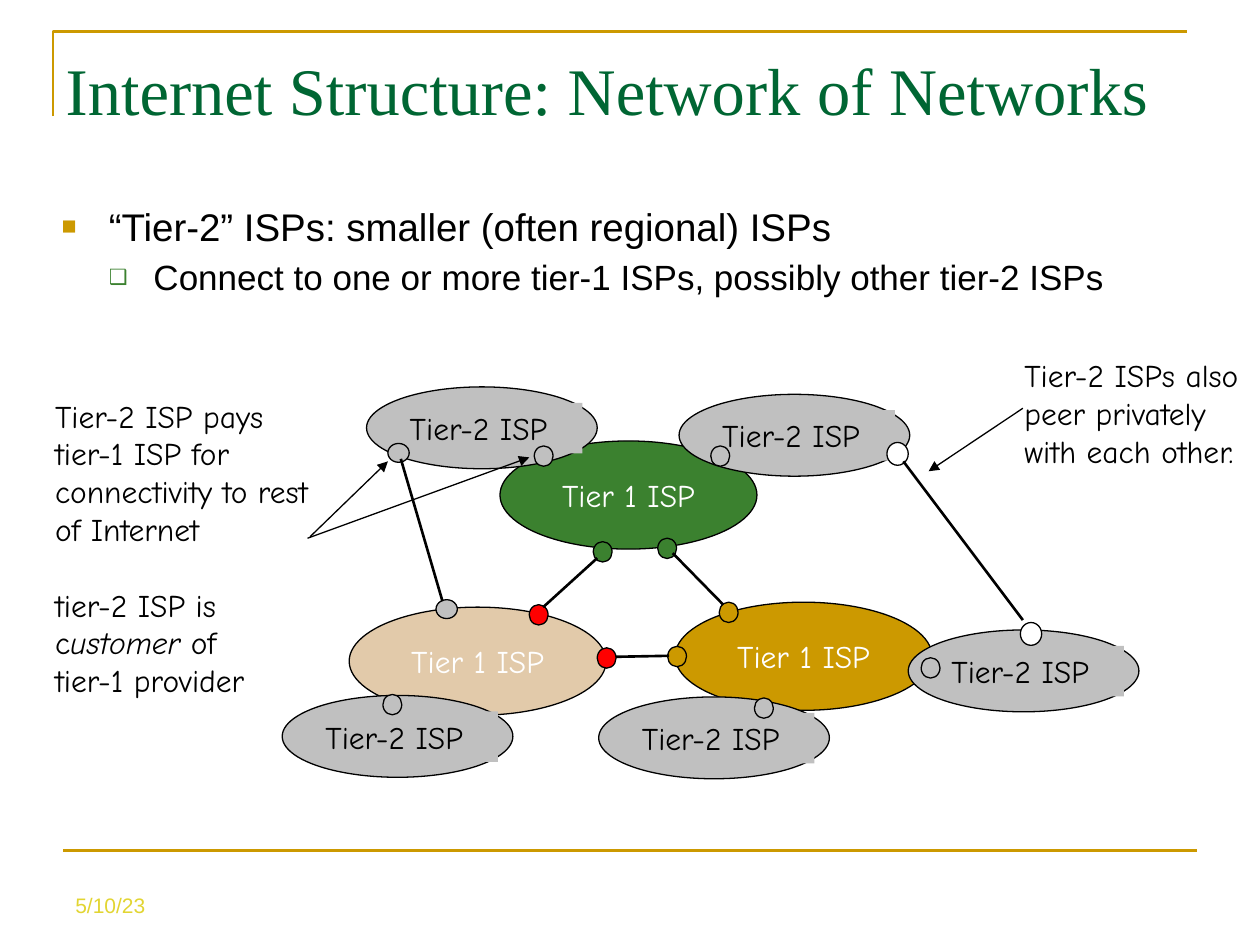
from lxml import etree
from pptx import Presentation
from pptx.dml.color import RGBColor
from pptx.enum.shapes import MSO_CONNECTOR, MSO_SHAPE
from pptx.enum.text import MSO_ANCHOR, MSO_AUTO_SIZE, PP_ALIGN
from pptx.oxml.ns import qn
from pptx.util import Cm, Pt

BLACK = RGBColor(0x00, 0x00, 0x00)
WHITE = RGBColor(0xFF, 0xFF, 0xFF)
GOLD = RGBColor(0xCC, 0x99, 0x00)
GREEN = RGBColor(0x3B, 0x81, 0x2F)
DARK_GREEN = RGBColor(0x00, 0x66, 0x33)
TAN = RGBColor(0xE2, 0xCA, 0xAA)
GREY = RGBColor(0xC0, 0xC0, 0xC0)
RED = RGBColor(0xFF, 0x00, 0x00)
YELLOW = RGBColor(0xE2, 0xD5, 0x32)

TITLE = {"name": "Times New Roman", "size": Pt(38)}
BODY = {"name": "Arial", "size": Pt(22)}
SUB_BODY = {"name": "Arial", "size": Pt(20)}
DATE = {"name": "Arial", "size": Pt(12)}
NOTE = {"name": "Comic Neue", "size": Pt(18)}


def write(p, text, fmt, color):
    r = p.add_run()
    r.text = text
    for key, value in fmt.items():
        setattr(r.font, key, value)
    r.font.color.rgb = color


def add_filled(kind, x, y, w, h, fill, outlined=True):
    s = shapes.add_shape(kind, Cm(x), Cm(y), Cm(w), Cm(h))
    s.shadow.inherit = False
    s.fill.solid()
    s.fill.fore_color.rgb = fill
    if outlined:
        s.line.color.rgb = BLACK
        s.line.width = Pt(0.75)
    else:
        s.line.fill.background()
    return s


prs = Presentation()
prs.slide_width, prs.slide_height = Cm(25.4), Cm(19.05)
slide = prs.slides.add_slide(prs.slide_layouts[1])
shapes = slide.shapes

# Corner frame
builder = shapes.build_freeform(Cm(1.07), Cm(2.34))
builder.add_line_segments([(Cm(1.07), Cm(0.64)), (Cm(23.93), Cm(0.64))], close=False)
frame = builder.convert_to_shape()
frame.shadow.inherit = False
frame.fill.background()
frame.line.color.rgb = GOLD
frame.line.width = Pt(1.5)

# Title and list
title, body = shapes.title, slide.placeholders[1]
for s, x, y, w, h, anchor in [
    (title, 1.07, 0.64, 22.89, 2.29, MSO_ANCHOR.MIDDLE),
    (body, 0.99, 3.96, 23.44, 2.54, MSO_ANCHOR.TOP),
]:
    s.left, s.top, s.width, s.height = Cm(x), Cm(y), Cm(w), Cm(h)
    s.text_frame.auto_size = MSO_AUTO_SIZE.NONE
    s.text_frame.vertical_anchor = anchor
p = title.text_frame.paragraphs[0]
p.alignment = PP_ALIGN.LEFT
write(p, "Internet Structure: Network of Networks", TITLE, DARK_GREEN)

tf = body.text_frame
for level, (text, fmt, margin, indent, bullet, color, percent) in enumerate([
    ("“Tier-2” ISPs: smaller (often regional) ISPs",
     BODY, 0.95, -0.95, "■", GOLD, 65),
    ("Connect to one or more tier-1 ISPs, possibly other tier-2 ISPs",
     SUB_BODY, 1.85, -0.9, "❑", GREEN, 60),
]):
    p = tf.add_paragraph() if level else tf.paragraphs[0]
    p.level = level
    write(p, text, fmt, BLACK)
    pPr = p._p.get_or_add_pPr()
    pPr.set("marL", str(Cm(margin)))
    pPr.set("indent", str(Cm(indent)))
    clr = etree.SubElement(pPr, qn("a:buClr"))
    etree.SubElement(clr, qn("a:srgbClr"), val=str(color))
    etree.SubElement(pPr, qn("a:buSzPct"), val=str(percent * 1000))
    etree.SubElement(pPr, qn("a:buFont"), typeface="Arial")
    etree.SubElement(pPr, qn("a:buChar"), char=bullet)

# Tier 1 providers
for x, y, fill in [(7.04, 12.24, TAN), (10.08, 8.89, GREEN), (13.61, 12.14, GOLD)]:
    s = add_filled(MSO_SHAPE.OVAL, x, y, 5.18, 2.18, fill)
    tf = s.text_frame
    tf.word_wrap = False
    tf.vertical_anchor = MSO_ANCHOR.MIDDLE
    p = tf.paragraphs[0]
    p.alignment = PP_ALIGN.CENTER
    write(p, "Tier 1 ISP", NOTE, WHITE)

# Tier-2 providers, each with a label plate
for x, y in [(13.69, 7.95), (7.39, 7.8), (5.69, 14.02), (12.07, 14.05), (18.31, 12.7)]:
    add_filled(MSO_SHAPE.OVAL, x, y, 4.65, 1.65, GREY)
    s = add_filled(MSO_SHAPE.RECTANGLE, x + 0.62, y + 0.32, 3.73, 1.02, GREY, outlined=False)
    tf = s.text_frame
    tf.word_wrap = True
    tf.vertical_anchor = MSO_ANCHOR.TOP
    p = tf.paragraphs[0]
    p.alignment = PP_ALIGN.LEFT
    write(p, "Tier-2 ISP", NOTE, BLACK)

# Connection points, grouped by size
for w, h, points in [
    (0.38, 0.41, [
        (14.5, 12.14, GOLD), (13.46, 13.03, GOLD),
        (13.26, 10.85, GREEN), (11.96, 10.92, GREEN),
        (10.67, 12.19, RED), (12.04, 13.06, RED),
        (14.33, 8.99, GREY), (10.77, 8.99, GREY), (7.72, 14, GREY),
        (15.21, 14.07, GREY), (18.57, 13.26, GREY),
    ]),
    (0.43, 0.38, [(7.82, 8.94, GREY), (8.79, 12.09, GREY)]),
    (0.43, 0.46, [(17.88, 8.92, WHITE), (20.57, 12.55, WHITE)]),
]:
    for x, y, fill in points:
        add_filled(MSO_SHAPE.OVAL, x, y, w, h, fill)

# Footer rule, network links and note arrows
for color, width, arrow, ends in [
    (GOLD, 1.5, False, [(1.27, 17.15, 24.13, 17.15)]),
    (BLACK, 1.5, False, [
        (12.42, 13.24, 13.49, 13.22), (13.56, 11.15, 14.58, 12.19),
        (10.95, 12.24, 12.04, 11.25), (8.08, 9.25, 8.92, 12.12),
        (18.21, 9.3, 20.62, 12.5),
    ]),
    (BLACK, 0.75, True, [
        (6.2, 10.85, 10.67, 9.22), (6.25, 10.82, 7.82, 9.3),
        (20.62, 8.23, 18.72, 9.5),
    ]),
]:
    for x1, y1, x2, y2 in ends:
        s = shapes.add_connector(MSO_CONNECTOR.STRAIGHT, Cm(x1), Cm(y1), Cm(x2), Cm(y2))
        s.line.color.rgb = color
        s.line.width = Pt(width)
        if arrow:
            etree.SubElement(s.line._get_or_add_ln(), qn("a:tailEnd"), type="triangle")
        etree.SubElement(s._element.spPr, qn("a:effectLst"))

# Notes and date: each paragraph is a list of (text, italic) runs
for x, y, w, h, fmt, color, anchor, paragraphs in [
    (0.86, 7.87, 5.69, 6.4, NOTE, BLACK, MSO_ANCHOR.TOP, [
        (0, [("Tier-2 ISP pays tier-1 ISP for connectivity to rest of Internet", False)]),
        (21.6, [("tier-2 ISP is c", False), ("ustomer", True), (" of", False)]),
        (0, [("tier-1 provider", False)]),
    ]),
    (20.4, 7.06, 5, 3.3, NOTE, BLACK, MSO_ANCHOR.TOP, [
        (0, [("Tier-2 ISPs also peer privately with each other.", False)]),
    ]),
    (1.27, 17.35, 5.92, 1.27, DATE, YELLOW, MSO_ANCHOR.BOTTOM, [
        (0, [("5/10/23", False)]),
    ]),
]:
    tf = shapes.add_textbox(Cm(x), Cm(y), Cm(w), Cm(h)).text_frame
    tf.word_wrap = True
    tf.vertical_anchor = anchor
    for i, (gap, runs) in enumerate(paragraphs):
        p = tf.add_paragraph() if i else tf.paragraphs[0]
        p.space_before = Pt(gap)
        for text, italic in runs:
            write(p, text, {**fmt, "italic": italic}, color)

prs.save("out.pptx")
